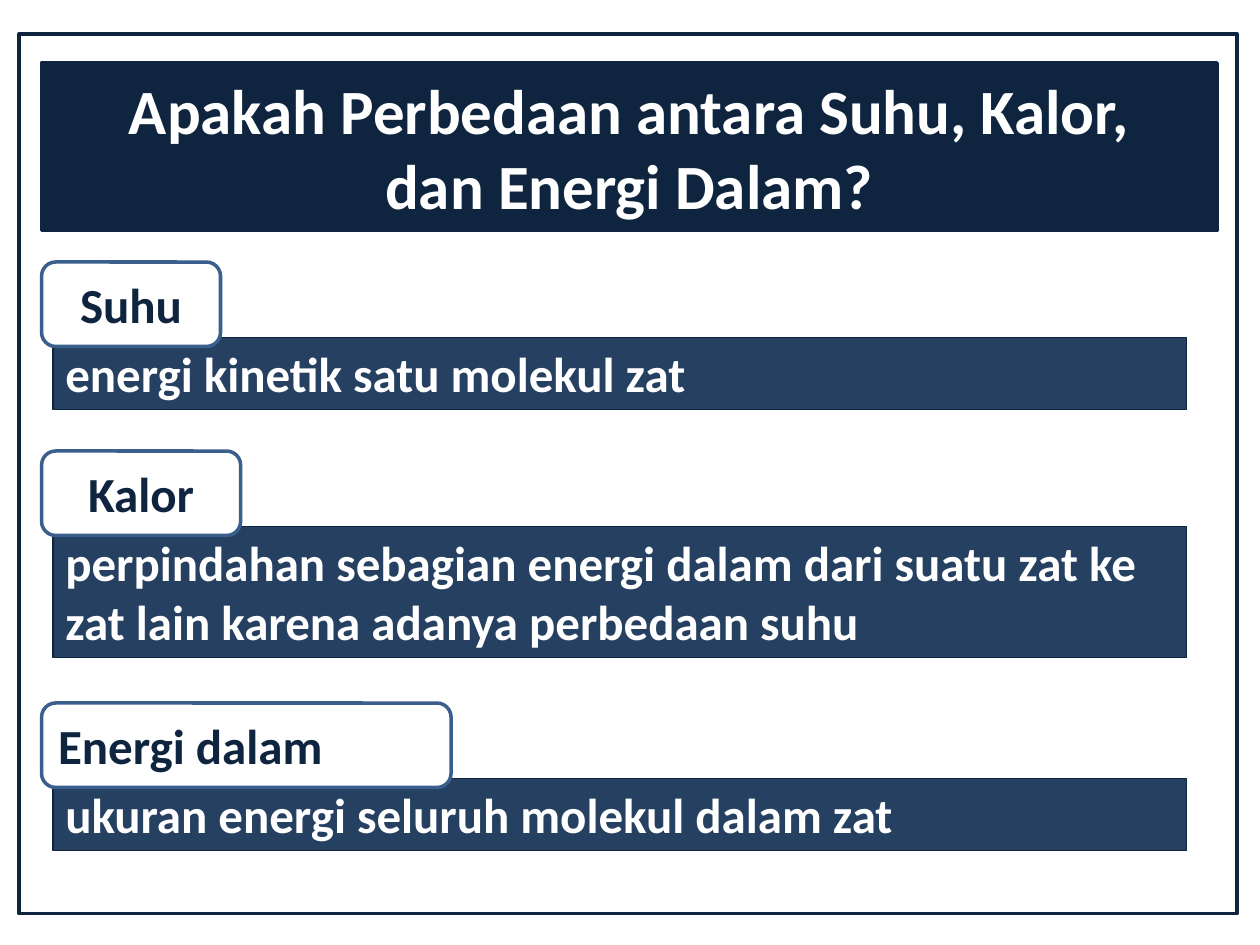
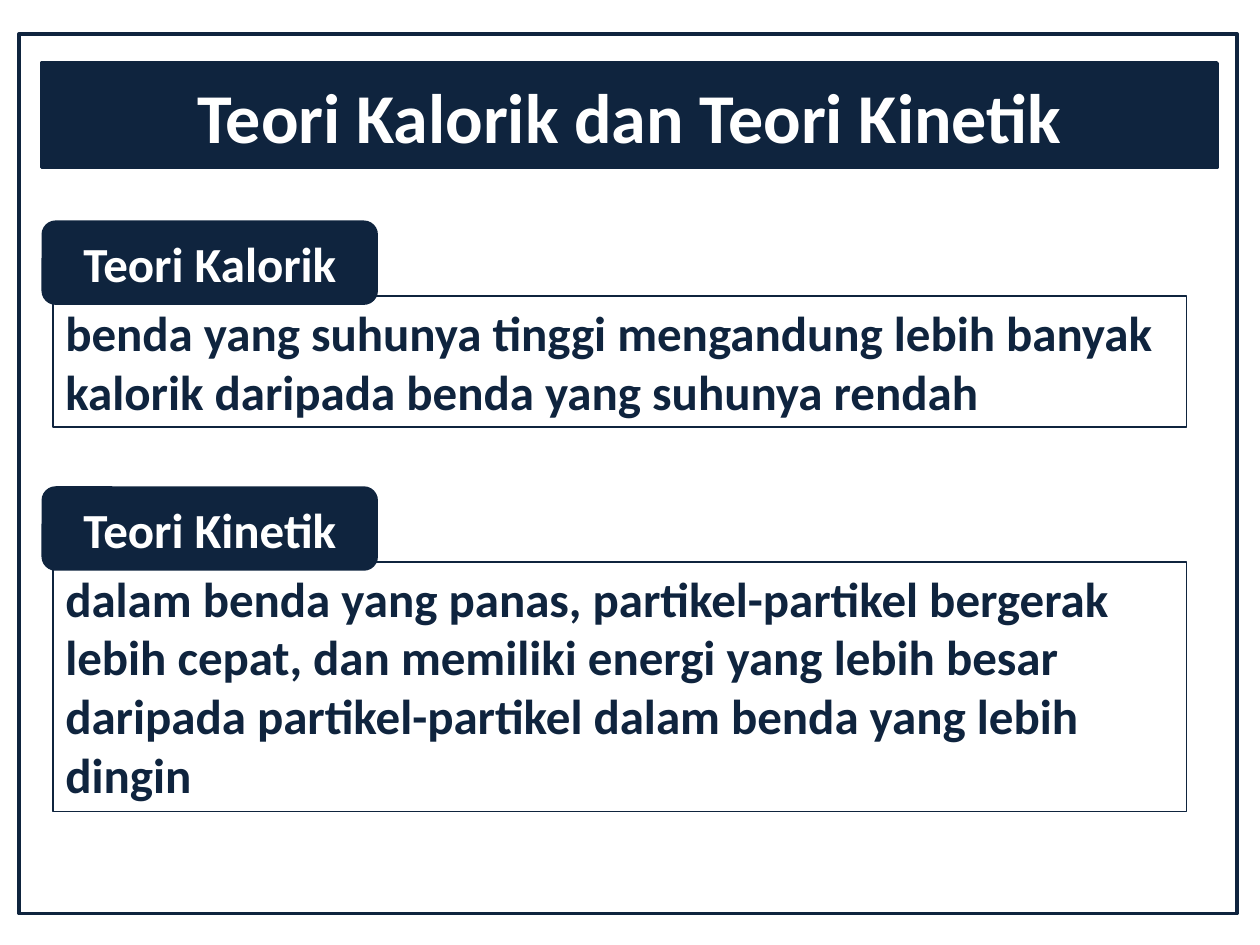
from lxml.etree import SubElement
from pptx import Presentation
from pptx.dml.color import RGBColor
from pptx.enum.shapes import MSO_SHAPE
from pptx.enum.text import MSO_ANCHOR, MSO_AUTO_SIZE, PP_ALIGN
from pptx.oxml.ns import qn
from pptx.util import Emu, Pt

EMU_PER_PX = 9144  # 100 px to the inch
COLORS = {
    "navy": "0F243E",
    "blue": "254061",
    "edge": "3A5F8C",
    "white": "FFFFFF",
}
FRAME = (15, 27, 967, 698)
TITLE_LEFT, TITLE_TOP, TITLE_WIDTH = 33, 50, 933
TAB_LEFT, TAB_HEIGHT = 33, 67
PANEL_SHIFT_X, PANEL_SHIFT_Y, PANEL_WIDTH = 9, 60, 900
PANEL_PADDING, LINE_HEIGHT = 10, 47

FRAME_STYLE = {"fill": None, "line": "navy", "weight": 2}
TITLE_STYLE = {"fill": "navy", "line": "navy", "weight": 2, "text": "white"}
DARK_PANELS = {
    "tab": {"fill": "white", "line": "edge", "weight": 2, "text": "navy"},
    "panel": {"fill": "blue", "line": "navy", "weight": 0.75, "text": "white"},
}
LIGHT_PANELS = {
    "tab": {"fill": "navy", "line": None, "text": "white"},
    "panel": {"fill": None, "line": "navy", "weight": 0.75, "text": "navy"},
}
TAB_TEXT = {"vertical_anchor": MSO_ANCHOR.MIDDLE, "word_wrap": True,
            "auto_size": MSO_AUTO_SIZE.NONE}
PANEL_TEXT = {"vertical_anchor": MSO_ANCHOR.TOP, "word_wrap": True,
              "auto_size": MSO_AUTO_SIZE.SHAPE_TO_FIT_TEXT}


def px(length):
    return Emu(length * EMU_PER_PX)


def rgb(name):
    return RGBColor.from_string(COLORS[name])


def set_all(target, values):
    for name, value in values.items():
        setattr(target, name, value)


def paint(shape, style):
    for fill, color in ((shape.fill, style["fill"]), (shape.line.fill, style["line"])):
        if color:
            fill.solid()
            fill.fore_color.rgb = rgb(color)
        else:
            fill.background()
    if style["line"]:
        shape.line.width = Pt(style["weight"])


def write(shape, lines, size, color, align, frame_values):
    frame = shape.text_frame
    set_all(frame, frame_values)
    frame.text = "\n".join(lines)
    for paragraph in frame.paragraphs:
        paragraph.alignment = align
        set_all(paragraph.font, {"name": "Calibri", "size": Pt(size), "bold": True})
        paragraph.font.color.rgb = rgb(color)


def add_box(shapes, kind, box, style):
    shape = shapes.add_shape(kind, *map(px, box))
    shape.shadow.inherit = False
    paint(shape, style)
    return shape


def add_title(slide, lines, height, size):
    title = slide.shapes.title
    box = (TITLE_LEFT, TITLE_TOP, TITLE_WIDTH, height)
    set_all(title, dict(zip(("left", "top", "width", "height"), map(px, box))))
    outline = SubElement(title.element.spPr, qn("a:prstGeom"), prst="roundRect")
    SubElement(outline, qn("a:avLst"))
    paint(title, TITLE_STYLE)
    write(title, lines, size, TITLE_STYLE["text"], PP_ALIGN.CENTER, TAB_TEXT)


def add_definition(slide, styles, top, tab_width, term, meaning, line_count,
                   tab_align=PP_ALIGN.CENTER):
    """Group a term tab with the panel that it overlaps at the top left."""
    group = slide.shapes.add_group_shape()
    panel_box = (TAB_LEFT + PANEL_SHIFT_X, top + PANEL_SHIFT_Y, PANEL_WIDTH,
                 PANEL_PADDING + LINE_HEIGHT * line_count)
    panel = add_box(group.shapes, MSO_SHAPE.RECTANGLE, panel_box, styles["panel"])
    write(panel, [meaning], 28, styles["panel"]["text"], PP_ALIGN.LEFT, PANEL_TEXT)
    tab = add_box(group.shapes, MSO_SHAPE.ROUNDED_RECTANGLE,
                  (TAB_LEFT, top, tab_width, TAB_HEIGHT), styles["tab"])
    write(tab, [term], 28, styles["tab"]["text"], tab_align, TAB_TEXT)


def add_definition_slide(deck, title_lines, title_height, title_size, styles, definitions):
    slide = deck.slides.add_slide(deck.slide_layouts.get_by_name("Title Only"))
    frame = add_box(slide.shapes, MSO_SHAPE.RECTANGLE, FRAME, FRAME_STYLE)
    slide.shapes.title.element.addprevious(frame.element)
    add_title(slide, title_lines, title_height, title_size)
    for definition in definitions:
        add_definition(slide, styles, *definition)


def main():
    deck = Presentation()
    set_all(deck, {"slide_width": px(1000), "slide_height": px(750)})
    add_definition_slide(
        deck, ["Apakah Perbedaan antara Suhu, Kalor,", "dan Energi Dalam?"],
        133, 36, DARK_PANELS,
        [
            (208, 142, "Suhu", "energi kinetik satu molekul zat", 1),
            (358, 158, "Kalor",
             "perpindahan sebagian energi dalam dari suatu zat ke zat lain "
             "karena adanya perbedaan suhu", 2),
            (558, 325, "Energi dalam", "ukuran energi seluruh molekul dalam zat", 1,
             PP_ALIGN.LEFT),
        ])
    add_definition_slide(
        deck, ["Teori Kalorik dan Teori Kinetik"], 83, 40, LIGHT_PANELS,
        [
            (175, 267, "Teori Kalorik",
             "benda yang suhunya tinggi mengandung lebih banyak kalorik "
             "daripada benda yang suhunya rendah", 2),
            (386, 267, "Teori Kinetik",
             "dalam benda yang panas, partikel-partikel bergerak lebih cepat, "
             "dan memiliki energi yang lebih besar daripada partikel-partikel "
             "dalam benda yang lebih dingin", 4),
        ])
    deck.save("out.pptx")


if __name__ == "__main__":
    main()
